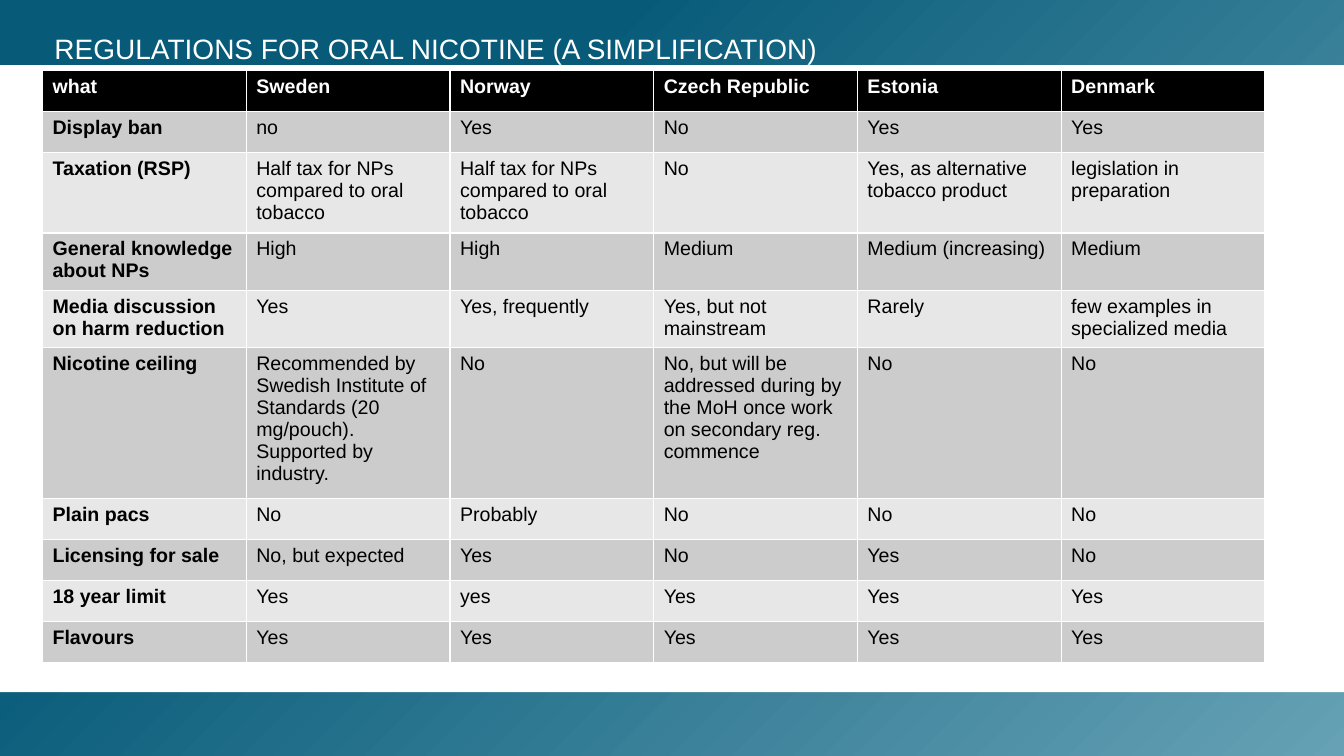
from pptx import Presentation
from pptx import util as u
from pptx.dml import color
from pptx.enum import shapes, text

SLIDE_WIDTH, SLIDE_HEIGHT = 960.48, 540
COLUMN_WIDTH, ROW_HEIGHT = 145.6, 29.2
BLACK, WHITE = "000000", "FFFFFF"
BAND_FILLS = ("CCCCCC", "E7E7E7")

REGULATIONS = [
    ["what", "Sweden", "Norway", "Czech Republic", "Estonia", "Denmark"],
    ["Display ban", "no", "Yes", "No", "Yes", "Yes"],
    ["Taxation (RSP)", "Half tax for NPs compared to oral tobacco",
     "Half tax for NPs compared to oral tobacco", "No",
     "Yes, as alternative tobacco product", "legislation in preparation"],
    ["General knowledge about NPs", "High", "High", "Medium",
     "Medium (increasing)", "Medium"],
    ["Media discussion on harm reduction", "Yes", "Yes, frequently",
     "Yes, but not mainstream", "Rarely", "few examples in specialized media"],
    ["Nicotine ceiling",
     "Recommended by Swedish Institute of Standards (20 mg/pouch). "
     "Supported by industry.", "No",
     "No, but will be addressed during by the MoH once work on secondary reg. "
     "commence", "No", "No"],
    ["Plain pacs", "No", "Probably", "No", "No", "No"],
    ["Licensing for sale", "No, but expected", "Yes", "No", "Yes", "No"],
    ["18 year limit", "Yes", "yes", "Yes", "Yes", "Yes"],
    ["Flavours", "Yes", "Yes", "Yes", "Yes", "Yes"],
]


def rgb(value):
    return color.RGBColor.from_string(value)


def write(frame, words, *, size, ink=BLACK, bold=False, spacing=None):
    para = frame.paragraphs[0]
    if spacing:
        para.line_spacing = spacing
    span = para.add_run()
    span.text = words
    span.font.name = "Arial"
    span.font.size = u.Pt(size)
    span.font.bold = bold
    span.font.color.rgb = rgb(ink)


def add_panel(page, top, height):
    """Add a full-width rectangle without outline or shadow."""
    panel = page.shapes.add_shape(
        shapes.MSO_SHAPE.RECTANGLE,
        u.Pt(0), u.Pt(top), u.Pt(SLIDE_WIDTH), u.Pt(height))
    panel.shadow.inherit = False
    panel.line.fill.background()
    return panel


def add_background(page):
    backdrop = add_panel(page, 0, SLIDE_HEIGHT)
    backdrop.fill.gradient()
    backdrop.fill.gradient_angle = 315
    stops = ((0.3, "075B79"), (1, "66A1B5"))
    for stop, (position, tint) in zip(backdrop.fill.gradient_stops, stops):
        stop.position = position
        stop.color.rgb = rgb(tint)

    content_area = add_panel(page, 46.6, 447.8)
    content_area.fill.solid()
    content_area.fill.fore_color.rgb = rgb(WHITE)


def add_title(page, words):
    box = page.shapes.add_textbox(u.Pt(29.5), u.Pt(17.3), u.Pt(906.5), u.Pt(33.8))
    frame = box.text_frame
    frame.word_wrap = True
    frame.vertical_anchor = text.MSO_ANCHOR.BOTTOM
    frame.margin_left = frame.margin_right = u.Pt(9.4)
    frame.margin_top = frame.margin_bottom = u.Pt(5)
    write(frame, words, size=20, ink=WHITE, spacing=0.8)


def add_regulation_table(page, rows):
    """Add the table; its default style supplies the white cell borders."""
    row_count, column_count = len(rows), len(rows[0])
    table = page.shapes.add_table(
        row_count, column_count, u.Pt(30.4), u.Pt(50.4),
        u.Pt(COLUMN_WIDTH * column_count), u.Pt(ROW_HEIGHT * row_count)).table
    for column in table.columns:
        column.width = u.Pt(COLUMN_WIDTH)
    for r, values in enumerate(rows):
        table.rows[r].height = u.Pt(ROW_HEIGHT)
        header = r == 0
        for c, words in enumerate(values):
            cell = table.cell(r, c)
            cell.fill.solid()
            cell.fill.fore_color.rgb = rgb(BLACK if header else BAND_FILLS[(r - 1) % 2])
            write(cell.text_frame, words, size=14,
                  ink=WHITE if header else BLACK, bold=header or c == 0)


def main():
    deck = Presentation()
    deck.slide_width = u.Pt(SLIDE_WIDTH)
    deck.slide_height = u.Pt(SLIDE_HEIGHT)
    page = deck.slides.add_slide(deck.slide_layouts[6])
    add_background(page)
    add_title(page, "REGULATIONS FOR ORAL NICOTINE (A SIMPLIFICATION)")
    add_regulation_table(page, REGULATIONS)
    deck.save("out.pptx")


if __name__ == "__main__":
    main()
